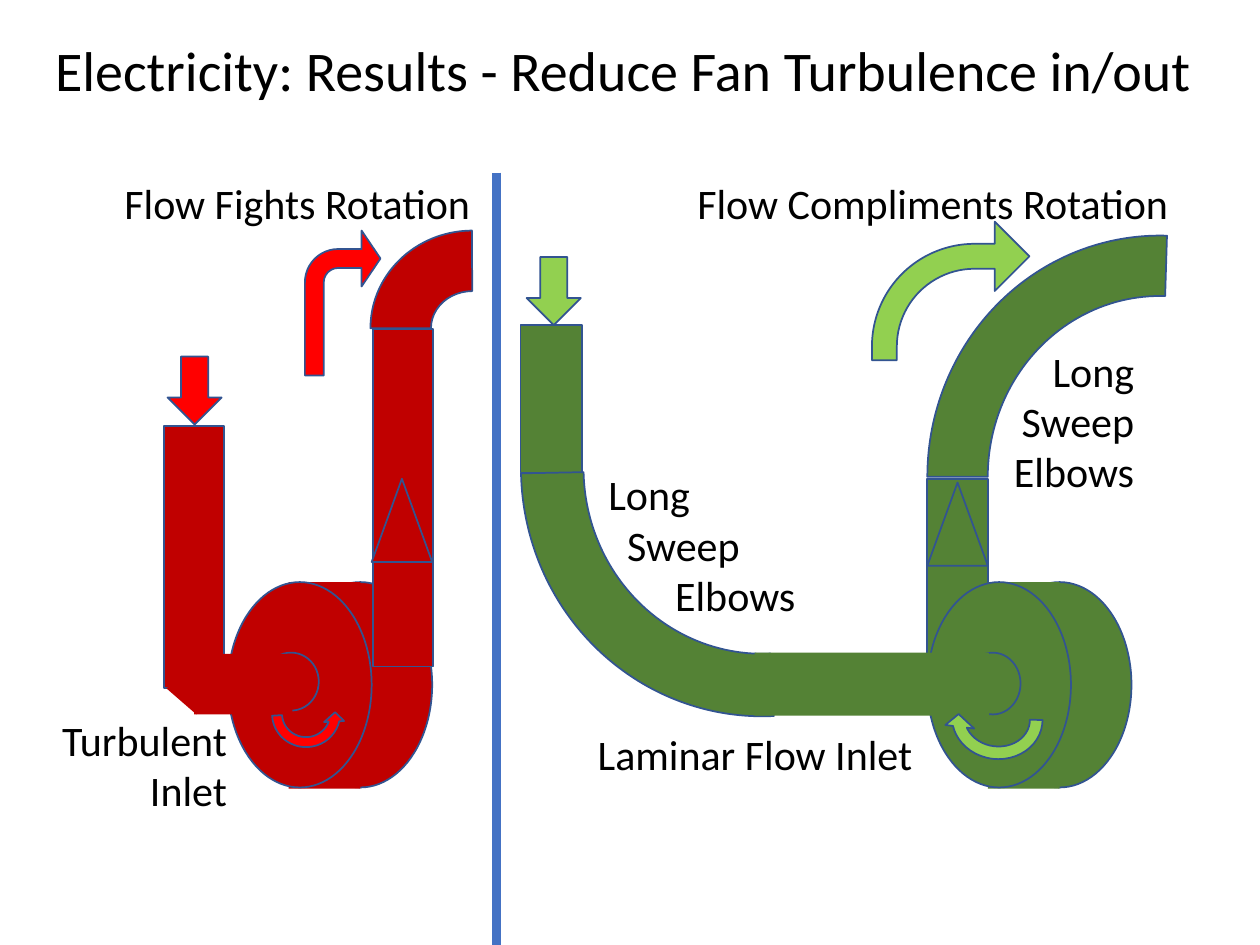
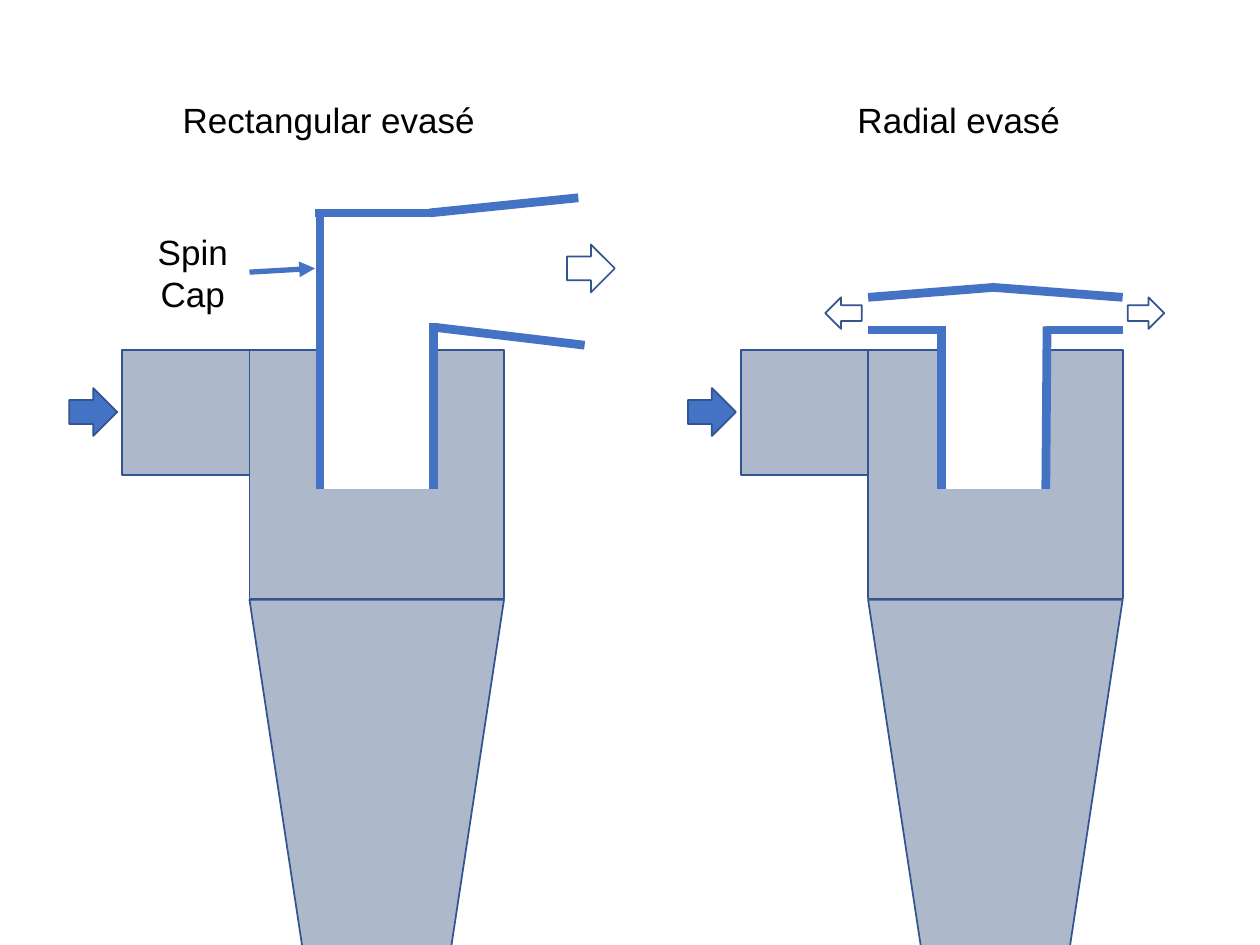
import pptx
import pptx.dml.color
import pptx.enum.shapes
import pptx.enum.text
import pptx.oxml
import pptx.oxml.ns
import pptx.util

Inches = pptx.util.Inches
Pt = pptx.util.Pt
PRESET = pptx.enum.shapes.MSO_SHAPE
ALIGN = pptx.enum.text.PP_ALIGN

BLACK, WHITE = "000000", "FFFFFF"
BLUE, OUTLINE, STEEL = "4472C4", "325491", "ADB9CA"
DARK_RED, RED = "C00000", "FF0000"
DARK_GREEN, GREEN = "548235", "92D050"
DUCT_LINE = 5

# Slide 1: preset, (left, top, width, height), fill, options
TITLE = "Electricity: Results - Reduce Fan Turbulence in/out"
FANS = [(1.81, DARK_RED), (7.36, DARK_GREEN)]
FAN_TOP, FAN_WIDTH, FAN_HEIGHT, FAN_DEPTH = 4.62, 1.14, 1.63, 0.48

GREEN_OUTLET = (PRESET.RECTANGLE, (7.36, 3.8, 0.48, 1.52), DARK_GREEN, {})
DUCTWORK = [
    (PRESET.RECTANGLE, (1.3, 3.38, 0.48, 2.08), DARK_RED, {}),
    (PRESET.RECTANGLE, (4.13, 2.58, 0.49, 1.17), DARK_GREEN, {}),
    (PRESET.OVAL, (2.09, 5.18, 0.44, 0.46), DARK_RED, {}),
    (PRESET.RECTANGLE, (1.54, 5.19, 0.78, 0.48), DARK_RED, {"outline": None}),
    (PRESET.ISOSCELES_TRIANGLE, (1.37, 5.32, 0.32, 0.28), DARK_RED,
     {"outline": None, "rotation": 41}),
    (PRESET.DOWN_ARROW, (1.33, 2.83, 0.43, 0.54), RED, {}),
    (PRESET.DOWN_ARROW, (4.18, 2.04, 0.43, 0.54), GREEN, {}),
    (PRESET.RECTANGLE, (2.96, 2.61, 0.48, 2.68), DARK_RED, {}),
    (PRESET.BLOCK_ARC, (2.94, 1.83, 1.62, 1.55), DARK_RED,
     {"adjust": (108, 161.79, 0.31)}),
    (PRESET.ISOSCELES_TRIANGLE, (2.95, 3.8, 0.48, 0.66), DARK_RED, {}),
    (PRESET.BLOCK_ARC, (7.36, 1.87, 3.69, 3.83), DARK_GREEN,
     {"adjust": (108, 163.02, 0.13)}),
    (PRESET.ISOSCELES_TRIANGLE, (7.36, 3.83, 0.48, 0.66), DARK_GREEN, {}),
    (PRESET.BLOCK_ARC, (4.08, 1.81, 3.93, 3.82), DARK_GREEN,
     {"adjust": (108, 163.02, 0.13), "rotation": 267.2}),
    (PRESET.OVAL, (7.66, 5.18, 0.44, 0.49), DARK_GREEN, {}),
    (PRESET.RECTANGLE, (5.99, 5.18, 1.86, 0.5), DARK_GREEN, {"outline": None}),
    (PRESET.BENT_ARROW, (2.42, 1.83, 0.6, 1.15), RED,
     {"adjust": (0.25, 0.37, 0.25, 0.44)}),
    (PRESET.BENT_ARROW, (6.92, 1.76, 1.25, 1.1), GREEN,
     {"adjust": (0.18, 0.25, 0.25, 0.74)}),
    (PRESET.CIRCULAR_ARROW, (7.49, 5.32, 0.85, 0.77), GREEN,
     {"adjust": (0.13, 11.42, 204.58, 104.76, 0.15), "rotation": 7, "flips": "HV"}),
    (PRESET.CIRCULAR_ARROW, (2.12, 5.36, 0.62, 0.61), RED,
     {"adjust": (0.13, 11.21, 204.58, 108, 0.13), "rotation": 356.6, "flips": "V"}),
]
FLOW_LABELS = [
    ("Flow Compliments Rotation", (5.37, 1.36, 4, 0.5)),
    ("Flow Fights Rotation", (0, 1.36, 3.83, 0.5)),
    ("Long Sweep Elbows", (7.33, 2.69, 1.77, 1.31)),
    ("Turbulent Inlet", (0, 5.62, 1.9, 0.91)),
    ("Laminar Flow Inlet", (4.26, 5.73, 3.08, 0.5)),
]
STAGGERED_WORDS = ["Long", "Sweep", "Elbows"]
STAGGERED_INDENTS = [0, 0.15, 0.53]
DIVIDER = (3.94, 1.37, 3.94, 7.5)

# Slide 2: lines are (x1, y1, x2, y2)
CYCLONES = [
    {
        "label": "Rectangular evasé", "label_left": 1.22, "left": 1.98,
        "opening": (2.56, 2.28, 0.85, 1.6),
        "walls": [
            (3.47, 2.6, 4.64, 2.74), (2.5, 1.69, 3.43, 1.69),
            (3.41, 1.69, 4.59, 1.57), (3.44, 3.88, 3.44, 2.56),
            (2.54, 3.88, 2.54, 1.69),
        ],
        "outflows": [((4.5, 1.94, 0.38, 0.38), 0)],
    },
    {
        "label": "Radial evasé", "label_left": 6.22, "left": 6.89,
        "opening": (7.45, 2.56, 0.85, 1.32),
        "walls": [
            (8.3, 2.62, 8.91, 2.62), (6.89, 2.62, 7.44, 2.62),
            (6.89, 2.36, 7.9, 2.28), (7.87, 2.28, 8.91, 2.36),
            (7.47, 3.88, 7.47, 2.59), (8.3, 3.88, 8.31, 2.59),
        ],
        "outflows": [((8.95, 2.36, 0.29, 0.25), 0), ((6.55, 2.36, 0.29, 0.25), 180)],
    },
]
SPIN_CAP = ("Spin Cap", (1.09, 1.78, 0.88, 0.77))
SPIN_CAP_POINTER = (1.98, 2.16, 2.5, 2.13)


def rgb(value):
    return pptx.dml.color.RGBColor.from_string(value)


def inches(lengths):
    return [Inches(length) for length in lengths]


def add_part(slide, preset, box, fill, outline=OUTLINE, adjust=(), rotation=0, flips=""):
    """Add a preset shape; a fill or outline of None is left empty."""
    part = slide.shapes.add_shape(preset, *inches(box))
    part.shadow.inherit = False
    if fill:
        part.fill.solid()
        part.fill.fore_color.rgb = rgb(fill)
    else:
        part.fill.background()
    if outline:
        part.line.color.rgb = rgb(outline)
        part.line.width = Pt(1)
    else:
        part.line.fill.background()
    for index, value in enumerate(adjust):
        part.adjustments[index] = value
    part.rotation = rotation
    for axis in flips:
        part._element.spPr.xfrm.set("flip" + axis, "1")


def add_line(slide, ends, width, arrow=False):
    line = slide.shapes.add_connector(
        pptx.enum.shapes.MSO_CONNECTOR.STRAIGHT, *inches(ends))
    line.line.color.rgb = rgb(BLUE)
    line.line.width = Pt(width)
    properties = line._element.spPr
    if arrow:
        outline = properties.find(pptx.oxml.ns.qn("a:ln"))
        tail = pptx.oxml.parse_xml(
            f'<a:tailEnd {pptx.oxml.ns.nsdecls("a")} type="triangle"/>')
        outline.append(tail)
    properties.append(pptx.oxml.parse_xml(
        f'<a:effectLst {pptx.oxml.ns.nsdecls("a")}/>'))


def style_paragraph(paragraph, size, font, align):
    paragraph.alignment = align
    paragraph.font.size = Pt(size)
    paragraph.font.name = font
    paragraph.font.color.rgb = rgb(BLACK)


def add_label(slide, lines, box, size, font, align, indents=None):
    frame = slide.shapes.add_textbox(*inches(box)).text_frame
    frame.word_wrap = True
    frame.text = "\n".join(lines)
    for paragraph, indent in zip(frame.paragraphs, indents or [0] * len(lines)):
        if indent:
            paragraph._p.get_or_add_pPr().set("marL", str(Inches(indent)))
        style_paragraph(paragraph, size, font, align)


def add_fan(slide, left, colour):
    """Draw the rear disc, the casing between discs and the front disc."""
    disc = (FAN_TOP, FAN_WIDTH, FAN_HEIGHT)
    add_part(slide, PRESET.OVAL, (left + FAN_DEPTH, *disc), colour)
    add_part(slide, PRESET.RECTANGLE,
             (left + FAN_DEPTH, FAN_TOP, FAN_WIDTH / 2, FAN_HEIGHT + 0.01),
             colour, outline=None)
    add_part(slide, PRESET.OVAL, (left, *disc), colour)


def build_fan_slide(deck):
    slide = deck.slides.add_slide(deck.slide_layouts.get_by_name("Title Only"))
    title = slide.shapes.title
    title.left, title.top, title.width, title.height = inches((0, 0.23, 9.9, 0.64))
    title.text_frame.text = TITLE
    title.text_frame.vertical_anchor = pptx.enum.text.MSO_ANCHOR.TOP
    style_paragraph(title.text_frame.paragraphs[0], 32, "Calibri", ALIGN.CENTER)

    preset, box, fill, options = GREEN_OUTLET
    add_part(slide, preset, box, fill, **options)
    for left, colour in FANS:
        add_fan(slide, left, colour)
    for preset, box, fill, options in DUCTWORK:
        add_part(slide, preset, box, fill, **options)
    for label, box in FLOW_LABELS:
        add_label(slide, [label], box, 24, "Calibri", ALIGN.RIGHT)
    add_label(slide, STAGGERED_WORDS, (4.73, 3.67, 1.77, 1.31), 24, "Calibri",
              ALIGN.LEFT, STAGGERED_INDENTS)
    add_line(slide, DIVIDER, DUCT_LINE)


def add_cyclone(slide, cyclone):
    left = cyclone["left"]
    add_part(slide, PRESET.RECTANGLE, (left, 2.78, 2.02, 1.97), STEEL)
    add_part(slide, PRESET.ISOSCELES_TRIANGLE, (left, 4.76, 2.02, 6.64), STEEL,
             rotation=180)
    add_part(slide, PRESET.RECTANGLE, (left - 1.01, 2.78, 1.01, 0.99), STEEL)
    add_part(slide, PRESET.RIGHT_ARROW, (left - 1.43, 3.08, 0.38, 0.38), BLUE)
    add_part(slide, PRESET.RECTANGLE, cyclone["opening"], WHITE, outline=None)
    for ends in cyclone["walls"]:
        add_line(slide, ends, DUCT_LINE)
    for box, rotation in cyclone["outflows"]:
        add_part(slide, PRESET.RIGHT_ARROW, box, None, rotation=rotation)
    add_label(slide, [cyclone["label"]], (cyclone["label_left"], 0.73, 2.78, 0.44),
              20, "Arial", ALIGN.CENTER)


def build_cyclone_slide(deck):
    slide = deck.slides.add_slide(deck.slide_layouts.get_by_name("Blank"))
    for cyclone in CYCLONES:
        add_cyclone(slide, cyclone)
    label, box = SPIN_CAP
    add_label(slide, [label], box, 20, "Arial", ALIGN.CENTER)
    add_line(slide, SPIN_CAP_POINTER, 3, arrow=True)


def main():
    deck = pptx.Presentation()
    deck.slide_width, deck.slide_height = inches((10, 7.5))
    build_fan_slide(deck)
    build_cyclone_slide(deck)
    deck.save("out.pptx")


if __name__ == "__main__":
    main()
